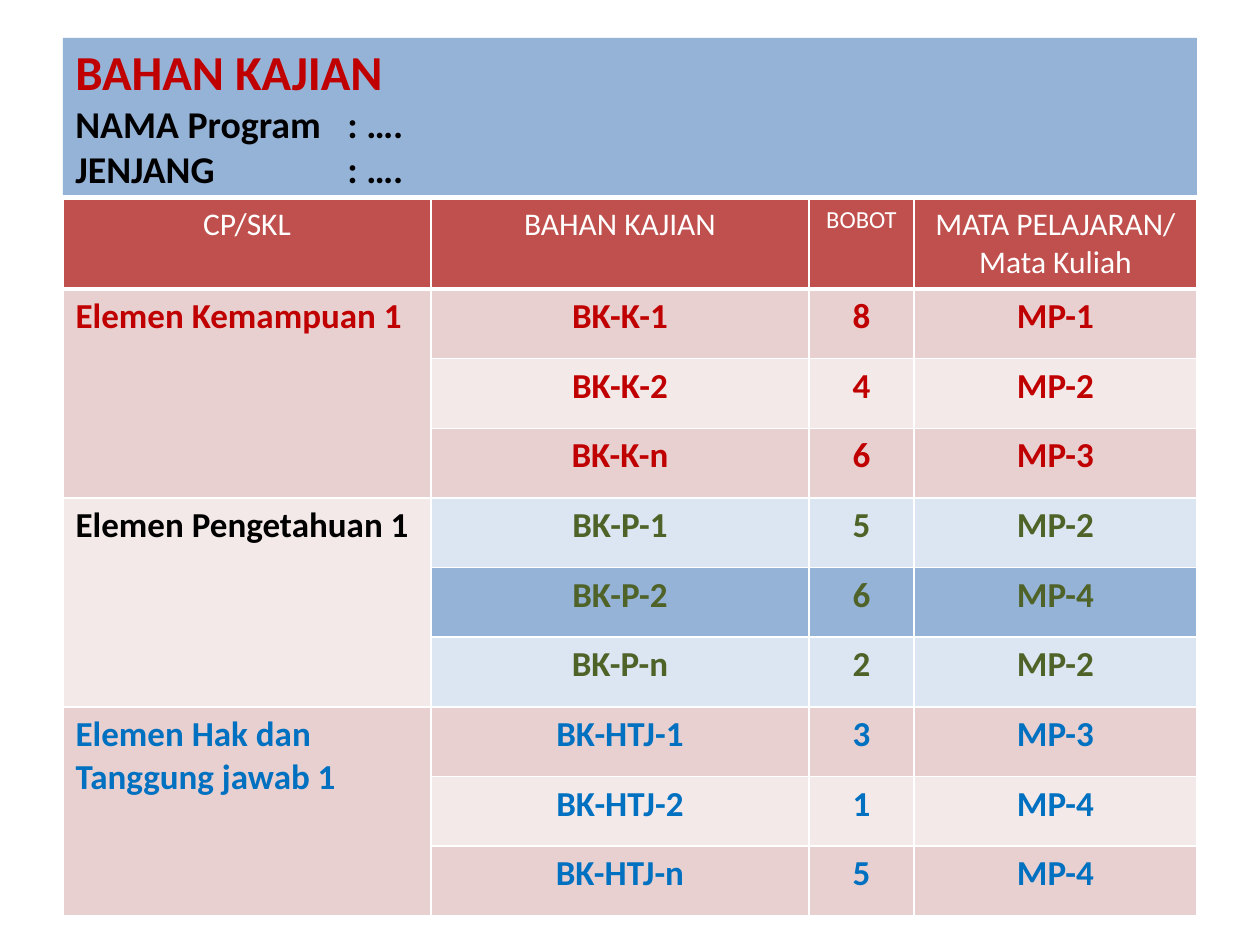
from lxml import etree
from pptx import Presentation, util as u
from pptx.dml.color import RGBColor
from pptx.enum import shapes, text
from pptx.oxml.ns import qn

SCALE = 914400 / 126  # EMU per px
WHITE = RGBColor(0xFF, 0xFF, 0xFF)
BLACK = RGBColor(0, 0, 0)
RED = RGBColor(0xC0, 0, 0)
GREEN = RGBColor(0x4F, 0x62, 0x28)
BLUE = RGBColor(0, 0x70, 0xC0)
BRICK = RGBColor(0xC0, 0x50, 0x4D)
ROSE = RGBColor(0xE8, 0xD0, 0xD0)
PALE_ROSE = RGBColor(0xF4, 0xE9, 0xE9)
STEEL = RGBColor(0x95, 0xB3, 0xD7)
PALE_STEEL = RGBColor(0xDC, 0xE6, 0xF2)
LEFT, CENTER = text.PP_ALIGN.LEFT, text.PP_ALIGN.CENTER


def px(length):
    return u.Emu(round(length * SCALE))


def write(paragraph, words, size=20, color=BLACK, bold=True, align=LEFT):
    paragraph.alignment = align
    run = paragraph.add_run()
    run.text = words
    run.font.name = "Calibri"
    run.font.size = u.Pt(size)
    run.font.bold = bold
    run.font.color.rgb = color


presentation = Presentation()
presentation.slide_width, presentation.slide_height = px(1260), px(945)
slide = presentation.slides.add_slide(presentation.slide_layouts[6])

# Title band
band = slide.shapes.add_shape(shapes.MSO_SHAPE.RECTANGLE, px(63), px(38), px(1134), px(157))
band.shadow.inherit = False
band.fill.solid()
band.fill.fore_color.rgb = STEEL
band.line.fill.background()
frame = band.text_frame
frame.word_wrap = True
frame.vertical_anchor = text.MSO_ANCHOR.MIDDLE
write(frame.paragraphs[0], "BAHAN KAJIAN", size=27.9, color=RED)
for line in ("NAMA Program\t: ….", "JENJANG\t: …."):
    paragraph = frame.add_paragraph()
    write(paragraph, line, size=21.6)
    tabs = etree.SubElement(paragraph._p.get_or_add_pPr(), qn("a:tabLst"))
    etree.SubElement(tabs, qn("a:tab"), pos=str(px(272)), algn="l")

# Table grid
HEADER_HEIGHT, BODY_HEIGHT = 90, 627
table = slide.shapes.add_table(10, 4, px(63), px(199), px(1134),
                               px(HEADER_HEIGHT + BODY_HEIGHT)).table
for column, width in zip(table.columns, (368, 378, 105, 283)):
    column.width = px(width)
for index, row in enumerate(table.rows):
    row.height = px(BODY_HEIGHT / 9 if index else HEADER_HEIGHT)

# Header row
headers = (("CP/SKL", 18), ("BAHAN KAJIAN", 18), ("BOBOT", 14),
           ("MATA PELAJARAN/ Mata Kuliah", 18))
for column, (label, size) in enumerate(headers):
    cell = table.cell(0, column)
    cell.fill.solid()
    cell.fill.fore_color.rgb = BRICK
    write(cell.text_frame.paragraphs[0], label, size=size, color=WHITE,
          bold=False, align=CENTER)

# Groups: element, its colour and fill, row colour, the two row fills, rows
groups = (
    ("Elemen Kemampuan 1", RED, ROSE, RED, (ROSE, PALE_ROSE),
     (("BK-K-1", "8", "MP-1"), ("BK-K-2", "4", "MP-2"), ("BK-K-n", "6", "MP-3"))),
    ("Elemen Pengetahuan 1", BLACK, PALE_ROSE, GREEN, (PALE_STEEL, STEEL),
     (("BK-P-1", "5", "MP-2"), ("BK-P-2", "6", "MP-4"), ("BK-P-n", "2", "MP-2"))),
    ("Elemen Hak dan Tanggung jawab 1", BLUE, ROSE, BLUE, (ROSE, PALE_ROSE),
     (("BK-HTJ-1", "3", "MP-3"), ("BK-HTJ-2", "1", "MP-4"), ("BK-HTJ-n", "5", "MP-4"))),
)
for group, (element, element_color, element_fill, color, fills, rows) in enumerate(groups):
    top = 1 + 3 * group
    table.cell(top, 0).merge(table.cell(top + 2, 0))
    write(table.cell(top, 0).text_frame.paragraphs[0], element, color=element_color)
    for offset, values in enumerate(rows):
        for column in range(4):
            cell = table.cell(top + offset, column)
            cell.fill.solid()
            cell.fill.fore_color.rgb = fills[offset % 2] if column else element_fill
            if column:
                write(cell.text_frame.paragraphs[0], values[column - 1],
                      color=color, align=CENTER)

# White cell borders, thicker under the header
for row in range(10):
    for column in range(4):
        properties = table.cell(row, column)._tc.get_or_add_tcPr()
        for position, side in enumerate(("lnL", "lnR", "lnT", "lnB")):
            thick = (row, side) in ((0, "lnB"), (1, "lnT"))
            border = etree.Element(qn("a:" + side), w=str(u.Pt(3 if thick else 1)))
            fill = etree.SubElement(border, qn("a:solidFill"))
            etree.SubElement(fill, qn("a:srgbClr"), val=str(WHITE))
            properties.insert(position, border)

presentation.save("out.pptx")
